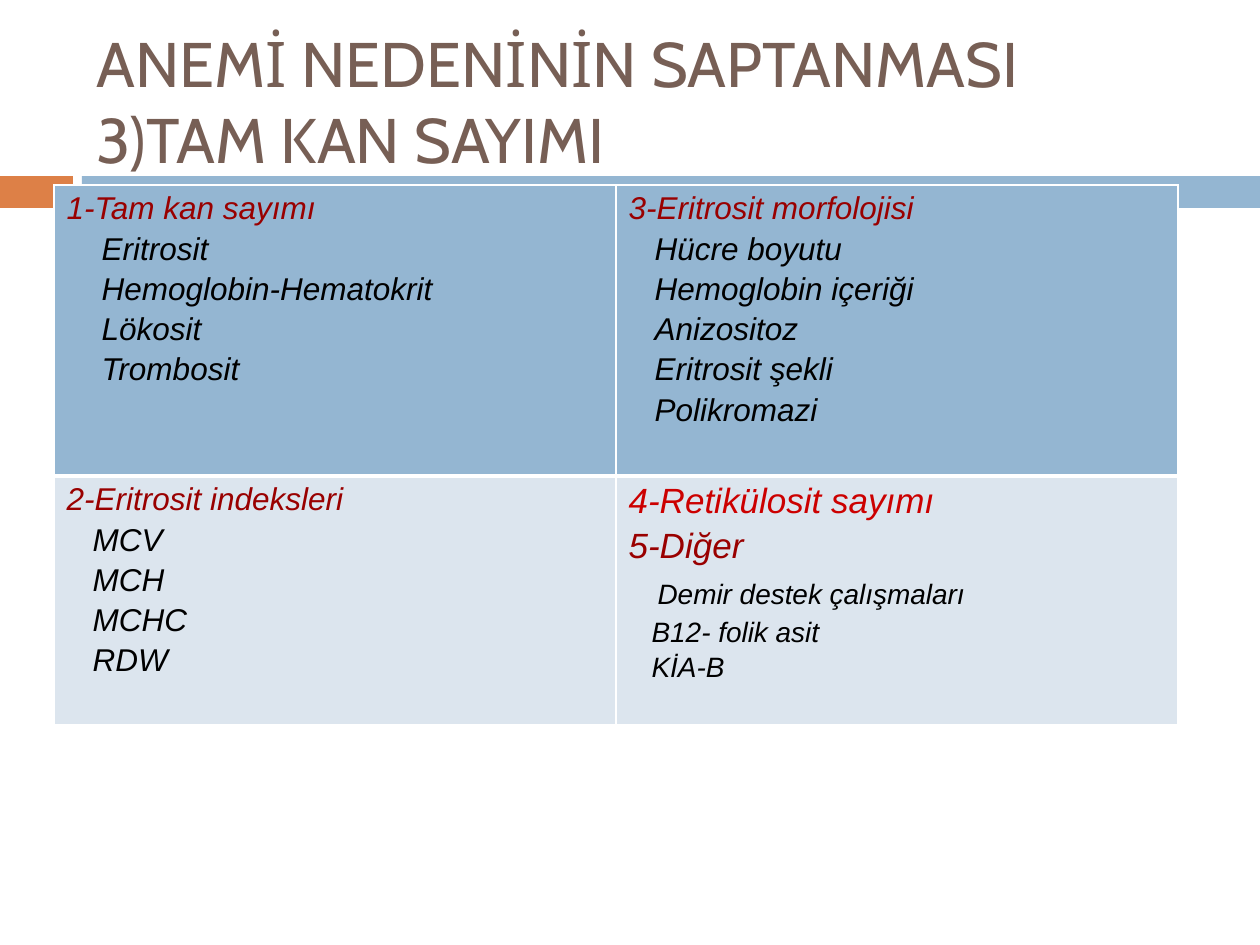
from dataclasses import dataclass

from lxml.etree import SubElement
from pptx import Presentation
from pptx.dml.color import RGBColor
from pptx.enum.shapes import MSO_SHAPE as Preset
from pptx.enum.text import MSO_ANCHOR as Anchor, PP_ALIGN as Align
from pptx.oxml.ns import qn
from pptx.util import Emu, Pt

PX = 914400 / 126


def px(length):
    return Emu(round(length * PX))


@dataclass(frozen=True)
class Theme:
    title_font: str = "Cabin"
    body_font: str = "Arial"
    title_size: int = 36
    large: int = 20
    medium: int = 18
    small: int = 16
    title: str = "775F55"
    accent: str = "DD8047"
    blue: str = "94B6D2"
    pale: str = "DCE5EE"
    heading: str = "990000"
    highlight: str = "CC0000"
    text: str = "000000"
    border: str = "FFFFFF"


THEME = Theme()


@dataclass(frozen=True)
class Line:
    """One cell paragraph; indent and space before are in px."""
    text: str
    size: int = THEME.medium
    color: str = THEME.text
    indent: int = 0
    before: int = 5


def section(heading, items, indent):
    return [Line(heading, color=THEME.heading)] + [
        Line(item, indent=indent) for item in items
    ]


class SlideBuilder:
    def __init__(self, presentation, theme):
        self.theme = theme
        self.slide = presentation.slides.add_slide(presentation.slide_layouts[5])

    def run(self, paragraph, text, font, size, color, italic=False):
        run = paragraph.add_run()
        run.text = text
        run.font.name = font
        run.font.size = Pt(size)
        run.font.bold = False
        run.font.italic = italic
        run.font.color.rgb = RGBColor.from_string(color)

    def bar(self, left, top, width, height, color):
        shape = self.slide.shapes.add_shape(
            Preset.RECTANGLE, px(left), px(top), px(width), px(height))
        shape.shadow.inherit = False
        shape.fill.solid()
        shape.fill.fore_color.rgb = RGBColor.from_string(color)
        shape.line.fill.background()

    def title(self, text, left, top, width, height):
        shape = self.slide.shapes.title
        shape.left, shape.top = px(left), px(top)
        shape.width, shape.height = px(width), px(height)
        frame = shape.text_frame
        frame.word_wrap = True
        frame.vertical_anchor = Anchor.MIDDLE
        paragraph = frame.paragraphs[0]
        paragraph.alignment = Align.LEFT
        self.run(paragraph, text, self.theme.title_font,
                 self.theme.title_size, self.theme.title)

    def borders(self, cell, widths):
        """Draw the borders; they must come before the cell fill in the XML."""
        properties = cell._tc.get_or_add_tcPr()
        for side, width in widths.items():
            line = SubElement(properties, qn(f"a:ln{side}"), w=str(Pt(width)))
            fill = SubElement(line, qn("a:solidFill"))
            SubElement(fill, qn("a:srgbClr"), val=self.theme.border)

    def cell(self, cell, lines, color, widths):
        self.borders(cell, widths)
        cell.fill.solid()
        cell.fill.fore_color.rgb = RGBColor.from_string(color)
        frame = cell.text_frame
        for index, line in enumerate(lines):
            paragraph = frame.add_paragraph() if index else frame.paragraphs[0]
            paragraph.space_before = px(line.before)
            properties = paragraph._p.get_or_add_pPr()
            properties.set("marL", str(px(line.indent)))
            properties.set("indent", "0")
            self.run(paragraph, line.text, self.theme.body_font,
                     line.size, line.color, italic=True)

    def table(self, rows, left, top, width, heights, colors):
        columns = len(rows[0])
        table = self.slide.shapes.add_table(
            len(rows), columns, px(left), px(top),
            px(width), px(sum(heights))).table
        for column in table.columns:
            column.width = px(width / columns)
        for index, lines_in_row in enumerate(rows):
            table.rows[index].height = px(heights[index])
            widths = {"L": 1, "R": 1,
                      "T": 3 if index else 1,
                      "B": 1 if index else 3}
            for column, lines in enumerate(lines_in_row):
                self.cell(table.cell(index, column), lines, colors[index], widths)


def main():
    presentation = Presentation()
    presentation.slide_width, presentation.slide_height = px(1260), px(945)
    builder = SlideBuilder(presentation, THEME)

    builder.bar(0, 176, 73, 32, THEME.accent)
    builder.bar(82, 176, 1178, 32, THEME.blue)
    builder.title("ANEMİ NEDENİNİN SAPTANMASI 3)TAM KAN SAYIMI", 84, 32, 1124, 136)

    blood_count = section(
        "1-Tam kan sayımı",
        ["Eritrosit", "Hemoglobin-Hematokrit", "Lökosit", "Trombosit"], 35)
    morphology = section(
        "3-Eritrosit morfolojisi",
        ["Hücre boyutu", "Hemoglobin içeriği", "Anizositoz",
         "Eritrosit şekli", "Polikromazi"], 26)
    indices = section("2-Eritrosit indeksleri", ["MCV", "MCH", "MCHC", "RDW"], 26)
    other_tests = [
        Line("4-Retikülosit sayımı", THEME.large, THEME.highlight),
        Line("5-Diğer", THEME.large, THEME.heading),
        Line("Demir destek çalışmaları", THEME.small, indent=29, before=14),
        Line("B12- folik asit", THEME.small, indent=23, before=7),
        Line("KİA-B", THEME.small, indent=23, before=4),
    ]
    builder.table([[blood_count, morphology], [indices, other_tests]],
                  54, 185, 1124, [291, 249], [THEME.blue, THEME.pale])

    presentation.save("out.pptx")


if __name__ == "__main__":
    main()
